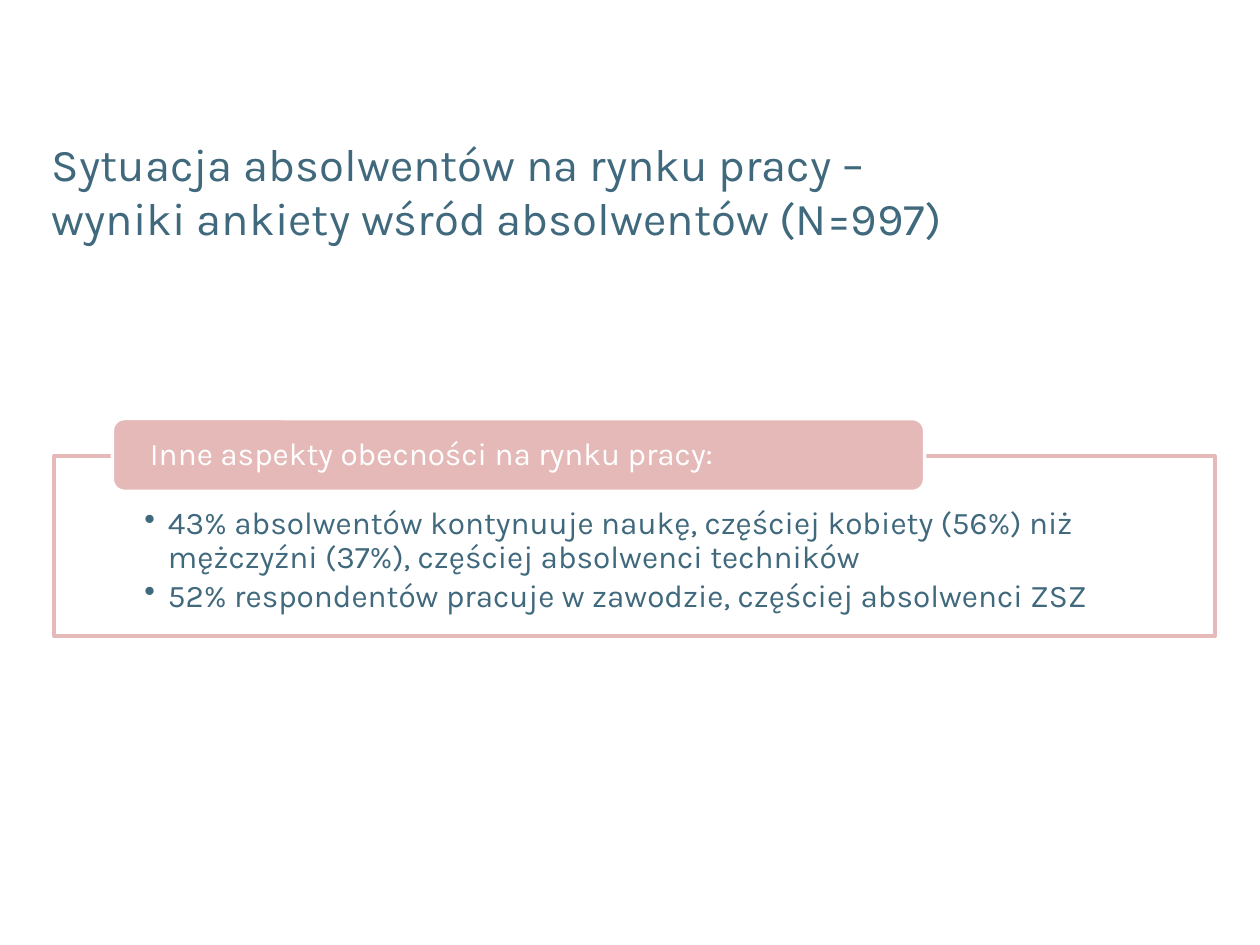
from dataclasses import dataclass

from lxml import etree
from pptx import Presentation
from pptx.dml.color import RGBColor
from pptx.enum.shapes import MSO_SHAPE
from pptx.enum.text import MSO_ANCHOR, PP_ALIGN
from pptx.oxml.ns import qn
from pptx.util import Pt

RECT, ROUND = MSO_SHAPE.RECTANGLE, MSO_SHAPE.ROUNDED_RECTANGLE
TOP, MIDDLE, BOTTOM = MSO_ANCHOR.TOP, MSO_ANCHOR.MIDDLE, MSO_ANCHOR.BOTTOM
LEFT = PP_ALIGN.LEFT

TEAL = RGBColor(0x40, 0x69, 0x7D)
PINK = RGBColor(0xE5, 0xB9, 0xB7)
WHITE = RGBColor(0xFF, 0xFF, 0xFF)
FONT = "Karla"
INDENT = 13.5


@dataclass
class Panel:
    shape: int
    area: tuple[float, float, float, float]
    fill: RGBColor
    line: RGBColor
    alpha: int  # percent
    pads: tuple[float, float, float, float]
    anchor: int
    ink: RGBColor
    lines: list[str]
    after: float
    bullet: bool


PANELS = [
    # Framed list
    Panel(RECT, (31, 260.6, 663.2, 103), WHITE, PINK, 90,
          (51.5, 29.5, 51.5, 10), TOP, TEAL,
          ["43% absolwentów kontynuuje naukę, częściej kobiety (56%) niż "
           "mężczyźni (37%), częściej absolwenci techników",
           "52% respondentów pracuje w zawodzie, częściej absolwenci ZSZ"],
          2.7, True),
    # Heading over the top edge of the frame
    Panel(ROUND, (64.2, 239.2, 464.2, 41.6), PINK, WHITE, 100,
          (19.5, 0, 19.5, 0), MIDDLE, WHITE,
          ["Inne aspekty obecności na rynku pracy:"], 0, False),
]


def add_dot(para) -> None:
    props = para._p.get_or_add_pPr()
    props.set("marL", str(Pt(INDENT)))
    props.set("indent", str(-Pt(INDENT)))
    etree.SubElement(props, qn("a:buChar")).set("char", "•")


def set_font(para, size: float, ink: RGBColor) -> None:
    for run in para.runs:
        run.font.name = FONT
        run.font.size = Pt(size)
        run.font.color.rgb = ink


def add_panel(slide, panel: Panel) -> None:
    box = slide.shapes.add_shape(panel.shape, *map(Pt, panel.area))
    box.shadow.inherit = False
    box.fill.solid()
    box.fill.fore_color.rgb = panel.fill
    if panel.alpha < 100:
        tint = box.fill._xPr.find(qn("a:solidFill"))[0]
        etree.SubElement(tint, qn("a:alpha")).set("val", str(panel.alpha * 1000))
    box.line.color.rgb = panel.line
    box.line.width = Pt(2)

    frame = box.text_frame
    frame.word_wrap = True
    frame.vertical_anchor = panel.anchor
    (frame.margin_left, frame.margin_top,
     frame.margin_right, frame.margin_bottom) = map(Pt, panel.pads)
    frame.text = "\n".join(panel.lines)
    for para in frame.paragraphs:
        para.alignment = LEFT
        para.line_spacing = 0.9
        para.space_after = Pt(panel.after)
        if panel.bullet:
            add_dot(para)
        set_font(para, 18, panel.ink)


def add_title(slide, text: str) -> None:
    box = slide.shapes.add_textbox(Pt(22.5), Pt(78.5), Pt(652), Pt(65))
    frame = box.text_frame
    frame.word_wrap = True
    frame.vertical_anchor = BOTTOM
    frame.text = text
    para = frame.paragraphs[0]
    para.text = text
    set_font(para, 26, TEAL)


def main() -> None:
    deck = Presentation()
    deck.slide_width, deck.slide_height = Pt(720), Pt(540)
    slide = deck.slides.add_slide(deck.slide_layouts[6])
    add_title(slide, "Sytuacja absolwentów na rynku pracy –\v"
                     "wyniki ankiety wśród absolwentów (N=997)")
    for panel in PANELS:
        add_panel(slide, panel)
    deck.save("out.pptx")


if __name__ == "__main__":
    main()
